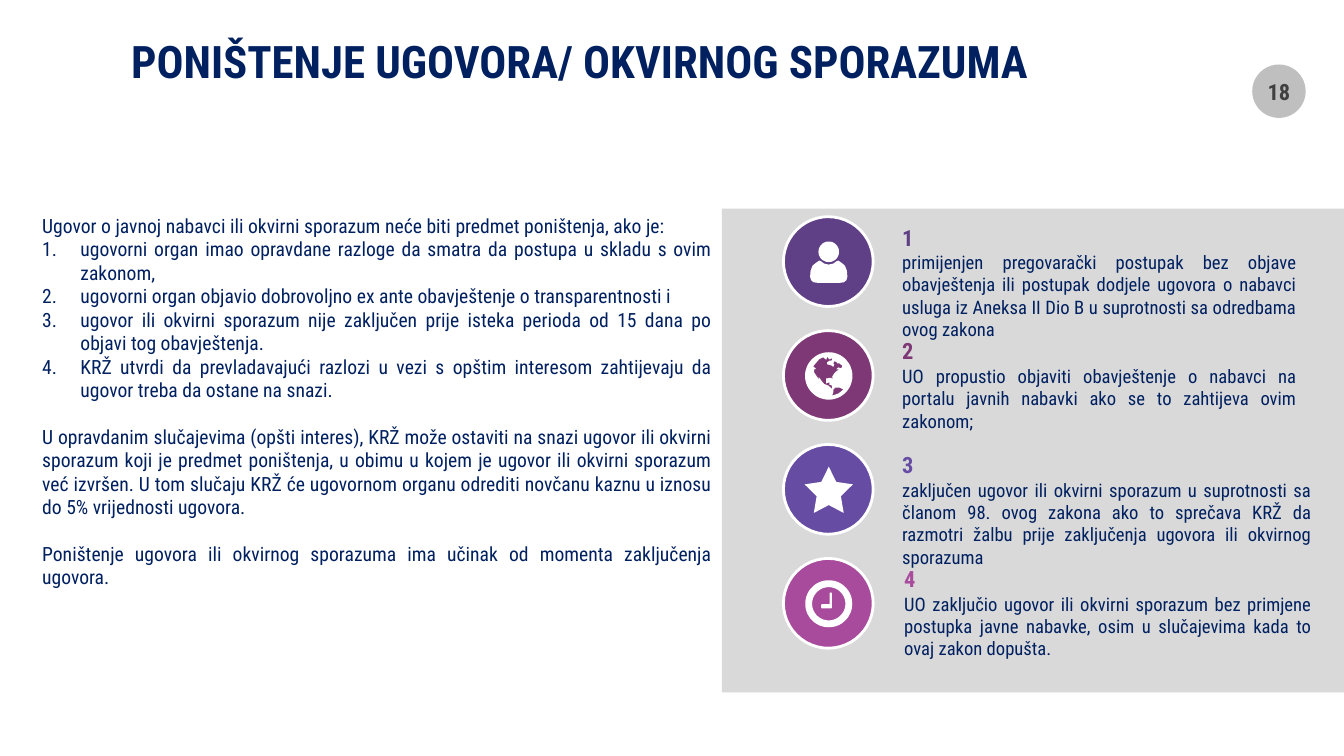
import math

import pptx
import pptx.dml.color
import pptx.enum.shapes
import pptx.enum.text
import pptx.oxml.ns
import pptx.util
from lxml import etree

PX = 9144  # 100 px to the inch
FONT = "Roboto Condensed"
COLORS = {
    "navy": "002060", "white": "FFFFFF", "panel": "D9D9D9",
    "page_badge": "BFBFBF", "page_number": "404040",
    "violet": "5F3F85", "plum": "7E3875", "indigo": "664CA3", "orchid": "A84B9C",
}
SHAPE = pptx.enum.shapes.MSO_SHAPE
ALIGN = pptx.enum.text.PP_ALIGN
ANCHOR = pptx.enum.text.MSO_ANCHOR

# Icon outlines are in tenths of a px, measured from the badge centre.
AMERICAS = [
    (75, -65), (95, -85), (125, -75), (135, -105), (115, -115), (105, -125),
    (85, -125), (75, -140), (55, -145), (45, -125), (55, -115), (45, -90),
    (25, -105), (-15, -115), (-15, -135), (5, -150), (35, -155), (35, -175),
    (5, -165), (-15, -190), (-25, -160), (-55, -185), (-95, -165), (-155, -95),
    (-125, -70), (-145, -65), (-145, -35), (-125, -5), (-95, 40), (-100, 10),
    (-70, 50), (-45, 80), (-5, 95), (35, 130), (30, 95), (5, 85), (8, 62),
    (-25, 75), (-25, 25), (25, 18), (38, 40), (35, 5), (55, -25), (75, -45),
    (105, -65),
]
SOUTH = [(145, 135), (105, 115), (65, 115), (45, 135), (45, 160), (35, 195), (95, 175)]
SHOULDERS = [
    (-115, 205), (-150, 200), (-175, 180), (-185, 145), (-180, 85), (-160, 35),
    (-130, 10), (-95, -15), (-80, -10), (-45, 15), (0, 25), (45, 15), (80, -10),
    (95, -15), (130, 10), (160, 35), (180, 85), (185, 145), (175, 180),
    (150, 200), (115, 205),
]
HANDS = [(10, -110), (32, -110), (32, 38), (25, 45), (-70, 45), (-75, 38),
         (-75, 12), (-70, 5), (10, 5)]


def circle(radius, center_y=0):
    angles = [math.radians(step * 6) for step in range(60)]
    return [(radius * math.cos(a), center_y + radius * math.sin(a)) for a in angles]


PERSON = [SHOULDERS, circle(102, -102)]
GLOBE = [circle(235), AMERICAS, SOUTH]
CLOCK = [circle(233), circle(165), HANDS]

GROUNDS = [
    ("violet", PERSON, 885, 411,
     "primijenjen pregovarački postupak bez objave obavještenja ili postupak dodjele "
     "ugovora o nabavci usluga iz Aneksa II Dio B u suprotnosti sa odredbama ovog zakona"),
    ("plum", GLOBE, 885, 411,
     "UO propustio objaviti obavještenje o nabavci na portalu javnih nabavki ako se to "
     "zahtijeva ovim zakonom;"),
    ("indigo", None, 885, 426,
     "zaključen ugovor ili okvirni sporazum u suprotnosti sa članom 98. ovog zakona ako to "
     "sprečava KRŽ da razmotri žalbu prije zaključenja ugovora ili okvirnog sporazuma"),
    ("orchid", CLOCK, 887, 424,
     "UO zaključio ugovor ili okvirni sporazum bez primjene postupka javne nabavke, osim u "
     "slučajevima kada to ovaj zakon dopušta."),
]
INTRO = "Ugovor o javnoj nabavci ili okvirni sporazum neće biti predmet poništenja, ako je:"
CONDITIONS = [
    "ugovorni organ imao opravdane razloge da smatra da postupa u skladu s ovim zakonom,",
    "ugovorni organ objavio dobrovoljno ex ante obavještenje o transparentnosti i",
    "ugovor ili okvirni sporazum nije zaključen prije isteka perioda od 15 dana po objavi "
    "tog obavještenja.",
    "KRŽ utvrdi da prevladavajući razlozi u vezi s opštim interesom zahtijevaju da ugovor "
    "treba da ostane na snazi.",
]
CONSEQUENCES = [
    "U opravdanim slučajevima (opšti interes), KRŽ može ostaviti na snazi ugovor ili okvirni "
    "sporazum koji je predmet poništenja, u obimu u kojem je ugovor ili okvirni sporazum već "
    "izvršen. U tom slučaju KRŽ će ugovornom organu odrediti novčanu kaznu u iznosu do 5% "
    "vrijednosti ugovora.",
    "Poništenje ugovora ili okvirnog sporazuma ima učinak od momenta zaključenja ugovora.",
]


class Deck:
    def __init__(self, width, height):
        self.file = pptx.Presentation()
        self.file.slide_width, self.file.slide_height = width * PX, height * PX
        self.slide = self.file.slides.add_slide(self.file.slide_layouts[5])

    def color(self, name):
        return pptx.dml.color.RGBColor.from_string(COLORS[name])

    def fill_in(self, paragraph, words, size, color="navy", bold=False, align=ALIGN.JUSTIFY):
        """Set the words of a paragraph and format them."""
        paragraph.text = words
        paragraph.alignment = align
        for run in paragraph.runs:
            run.font.name, run.font.size, run.font.bold = FONT, pptx.util.Pt(size), bold
            run.font.color.rgb = self.color(color)

    def number(self, paragraph, indent):
        """Make the paragraph an item of an automatically numbered list."""
        props = paragraph._p.get_or_add_pPr()
        props.set("marL", str(indent * PX))
        props.set("indent", str(-indent * PX))
        bullet = etree.SubElement(props, pptx.oxml.ns.qn("a:buAutoNum"))
        bullet.set("type", "arabicPeriod")

    def title(self, words, left, top, width, height):
        heading = self.slide.shapes.title
        heading.left, heading.top = left * PX, top * PX
        heading.width, heading.height = width * PX, height * PX
        frame = heading.text_frame
        self.fit(frame)
        self.fill_in(frame.paragraphs[0], words, 32, bold=True)

    def fit(self, frame):
        """Remove the margins of a text frame and centre it vertically."""
        frame.margin_left = frame.margin_right = frame.margin_top = frame.margin_bottom = 0
        frame.vertical_anchor = ANCHOR.MIDDLE
        frame.auto_size = pptx.enum.text.MSO_AUTO_SIZE.NONE
        frame.word_wrap = True

    def paint(self, shape, fill, line=None):
        shape.shadow.inherit = False
        shape.fill.solid()
        shape.fill.fore_color.rgb = self.color(fill)
        if line:
            shape.line.color.rgb = self.color(line)
            shape.line.width = pptx.util.Pt(2)
        else:
            shape.line.fill.background()

    def shape(self, kind, left, top, width, height, fill, line=None):
        shape = self.slide.shapes.add_shape(kind, left * PX, top * PX, width * PX, height * PX)
        self.paint(shape, fill, line)
        return shape

    def icon(self, outlines, center_x, center_y):
        """Draw nested outlines as one white shape; inner outlines are holes."""
        builder = self.slide.shapes.build_freeform(*outlines[0][0], scale=PX / 10)
        for index, outline in enumerate(outlines):
            if index:
                builder.move_to(*outline[0])
            builder.add_line_segments(outline[1:], close=True)
        self.paint(builder.convert_to_shape(center_x * PX, center_y * PX), "white")

    def text_box(self, left, top, width, height):
        frame = self.slide.shapes.add_textbox(
            left * PX, top * PX, width * PX, height * PX).text_frame
        frame.word_wrap = True
        return frame


def main():
    deck = Deck(1333, 750)
    page = deck.shape(SHAPE.OVAL, 1242, 64, 53, 53, "page_badge").text_frame
    deck.fit(page)
    deck.fill_in(page.paragraphs[0], "18", 16, "page_number", True, ALIGN.CENTER)
    deck.title("PONIŠTENJE UGOVORA/ OKVIRNOG SPORAZUMA", 130, 30, 1098, 61)
    deck.shape(SHAPE.RECTANGLE, 716, 207, 617, 480, "panel")

    for index, (color, outlines, left, width, ground) in enumerate(GROUNDS):
        top = 215 + 113 * index
        deck.shape(SHAPE.OVAL, 777, top, 89, 89, color, "white")
        if outlines:
            deck.icon(outlines, 822, top + 45)
        else:
            star = deck.shape(SHAPE.STAR_5_POINT, 798, top + 22, 48, 46, "white")
            star.adjustments[0] = 0.25
        body = deck.text_box(left, top + 29, width, 100)
        deck.fill_in(body.paragraphs[0], ground, 13.3)
        label = deck.text_box(left, top + 2, 33, 37)
        deck.fill_in(label.paragraphs[0], str(index + 1), 16, color, True, ALIGN.LEFT)

    rules = deck.text_box(32, 207, 684, 434)
    deck.fill_in(rules.paragraphs[0], INTRO, 14)
    for condition in CONDITIONS:
        item = rules.add_paragraph()
        deck.number(item, 38)
        deck.fill_in(item, condition, 14)
    for consequence in CONSEQUENCES:
        remark = rules.add_paragraph()
        remark.space_before = pptx.util.Pt(16.4)
        deck.fill_in(remark, consequence, 14)

    deck.file.save("out.pptx")


if __name__ == "__main__":
    main()
